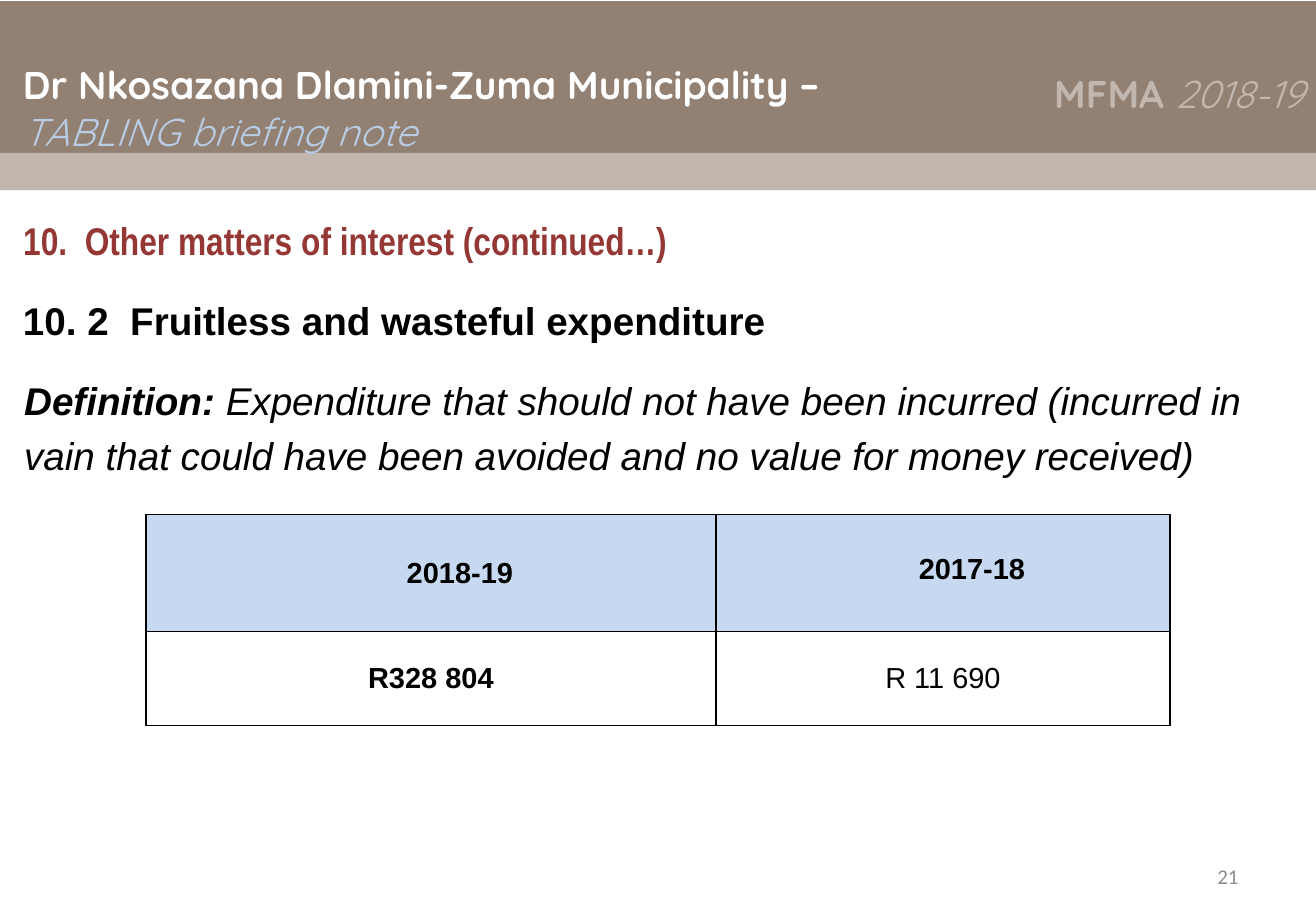
import pptx
import pptx.dml.color
import pptx.enum.shapes
import pptx.enum.text
import pptx.oxml
import pptx.oxml.ns
import pptx.util

ALIGN = pptx.enum.text.PP_ALIGN
ANCHOR = pptx.enum.text.MSO_ANCHOR
Pt = pptx.util.Pt
Inches = pptx.util.Inches

SLIDE_SIZE = (11.36, 7.93)


class Theme:
    header, strip = "928073", "C1B7AF"
    white, black, sky = "FFFFFF", "000000", "B8CCE4"
    heading, table_head, number = "953735", "C6D9F1", "8C8C8C"
    display, narrow, body, plain = "Quicksand", "Arial Narrow", "Arial", "Calibri"
    large, medium, small = 24, 18, 13
    border = 1


# Runs: (text, font, size, colour, bold, italic)
# Places: left, top, width, height in percent of the slide
BANDS = [
    ((0, 0.13, 100, 16.77), Theme.header),
    ((0, 16.65, 100, 4.04), Theme.strip),
]
HEADING = {
    "place": (0.88, 22.95, 90, 7.06),
    "lines": [[("10.\u00a0 Other matters of interest (continued…)".replace("\u00a0", " "),
                Theme.narrow, Theme.large, Theme.heading, True, False)]],
}
TEXTS = [
    {"place": (0.88, 6.05, 76, 10.8),
     "lines": [
         [("Dr Nkosazana Dlamini-Zuma Municipality –",
           Theme.display, Theme.large, Theme.white, True, False)],
         [("TABLING briefing note",
           Theme.display, Theme.large, Theme.sky, False, True)]]},
    {"place": (77.02, 6.94, 22.89, 8),
     "lines": [
         [("MFMA ", Theme.display, Theme.large, Theme.strip, True, False),
          ("2018-19", Theme.display, Theme.large, Theme.strip, False, True)]],
     "format": {"alignment": ALIGN.RIGHT}},
    {"place": (0.88, 31.65, 97, 7),
     "lines": [
         [("10. 2  Fruitless and wasteful expenditure",
           Theme.body, Theme.large, Theme.black, True, False)]]},
    {"place": (0.97, 39.34, 96, 14),
     "lines": [
         [("Definition: ", Theme.body, Theme.large, Theme.black, True, True),
          ("Expenditure that should not have been incurred (incurred in vain "
           "that could have been avoided and no value for money received)",
           Theme.body, Theme.large, Theme.black, False, True)]],
     "format": {"line_spacing": 1.2}},
    {"place": (71.65, 92.69, 23.33, 5.3),
     "lines": [[("21", Theme.plain, Theme.small, Theme.number, False, False)]],
     "format": {"alignment": ALIGN.RIGHT},
     "anchor": ANCHOR.MIDDLE},
]
EXPENDITURE = [["2018-19", "2017-18"], ["R328 804", "R 11 690"]]
TABLE_CORNER = (11.09, 55.99)
COLUMN_SHARES = (43.31, 34.51)
ROW_SHARES = (12.74, 10.21)
HEAD_INDENT = 0.5
LATER_HEAD_DROP = 0.33


def across(percent):
    return Inches(SLIDE_SIZE[0] * percent / 100)


def down(percent):
    return Inches(SLIDE_SIZE[1] * percent / 100)


def box(place):
    left, top, width, height = place
    return across(left), down(top), across(width), down(height)


def colour(value):
    return pptx.dml.color.RGBColor.from_string(value)


def assign(target, values):
    for name, value in values.items():
        setattr(target, name, value)


def add_run(paragraph, text, font, size, ink, bold, italic):
    run = paragraph.add_run()
    run.text = text
    assign(run.font, {"name": font, "size": Pt(size), "bold": bold, "italic": italic})
    run.font.color.rgb = colour(ink)


def write(frame, lines, paragraph_format=None, anchor=ANCHOR.TOP):
    assign(frame, {
        "word_wrap": True, "auto_size": pptx.enum.text.MSO_AUTO_SIZE.NONE,
        "vertical_anchor": anchor,
        "margin_left": Inches(0.1), "margin_right": Inches(0.1),
        "margin_top": Inches(0.05), "margin_bottom": Inches(0.05)})
    for index, runs in enumerate(lines):
        paragraph = frame.add_paragraph() if index else frame.paragraphs[0]
        assign(paragraph, {"alignment": ALIGN.LEFT, **(paragraph_format or {})})
        for run in runs:
            add_run(paragraph, *run)


def border_cell(cell):
    properties = cell._tc.get_or_add_tcPr()
    for index, side in enumerate(("lnL", "lnR", "lnT", "lnB")):
        properties.insert(index, pptx.oxml.parse_xml(
            f'<a:{side} {pptx.oxml.ns.nsdecls("a")} w="{Pt(Theme.border)}">'
            f'<a:solidFill><a:srgbClr val="{Theme.black}"/></a:solidFill></a:{side}>'))


def add_expenditure_table(slide):
    place = (*TABLE_CORNER, sum(COLUMN_SHARES), sum(ROW_SHARES))
    table = slide.shapes.add_table(
        len(EXPENDITURE), len(EXPENDITURE[0]), *box(place)).table
    assign(table, {"first_row": False, "horz_banding": False})
    for column, share in zip(table.columns, COLUMN_SHARES):
        column.width = across(share)
    for row, share in zip(table.rows, ROW_SHARES):
        row.height = down(share)
    for r, values in enumerate(EXPENDITURE):
        for c, value in enumerate(values):
            cell, is_head = table.cell(r, c), r == 0
            dropped = is_head and c > 0
            assign(cell, {
                "margin_left": Inches(0.07), "margin_right": Inches(0.07),
                "margin_top": Inches(LATER_HEAD_DROP if dropped else 0),
                "margin_bottom": 0,
                "vertical_anchor": ANCHOR.TOP if dropped else ANCHOR.MIDDLE})
            cell.fill.solid()
            cell.fill.fore_color.rgb = colour(Theme.table_head if is_head else Theme.white)
            border_cell(cell)
            paragraph = cell.text_frame.paragraphs[0]
            paragraph.alignment = ALIGN.CENTER
            if is_head:
                paragraph._p.get_or_add_pPr().set("marL", str(Inches(HEAD_INDENT)))
            add_run(paragraph, value, Theme.body, Theme.medium, Theme.black,
                    is_head or c == 0, False)


def main():
    deck = pptx.Presentation()
    deck.slide_width, deck.slide_height = map(Inches, SLIDE_SIZE)
    slide = deck.slides.add_slide(deck.slide_layouts.get_by_name("Title Only"))

    for place, fill in BANDS:
        band = slide.shapes.add_shape(
            pptx.enum.shapes.MSO_SHAPE.RECTANGLE, *box(place))
        band.shadow.inherit = False
        band.fill.solid()
        band.fill.fore_color.rgb = colour(fill)
        band.line.fill.background()

    heading = slide.shapes.title
    assign(heading, dict(zip(("left", "top", "width", "height"), box(HEADING["place"]))))
    write(heading.text_frame, HEADING["lines"])

    for text in TEXTS:
        frame = slide.shapes.add_textbox(*box(text["place"])).text_frame
        write(frame, text["lines"], text.get("format"), text.get("anchor", ANCHOR.TOP))

    add_expenditure_table(slide)
    deck.save("out.pptx")


if __name__ == "__main__":
    main()
